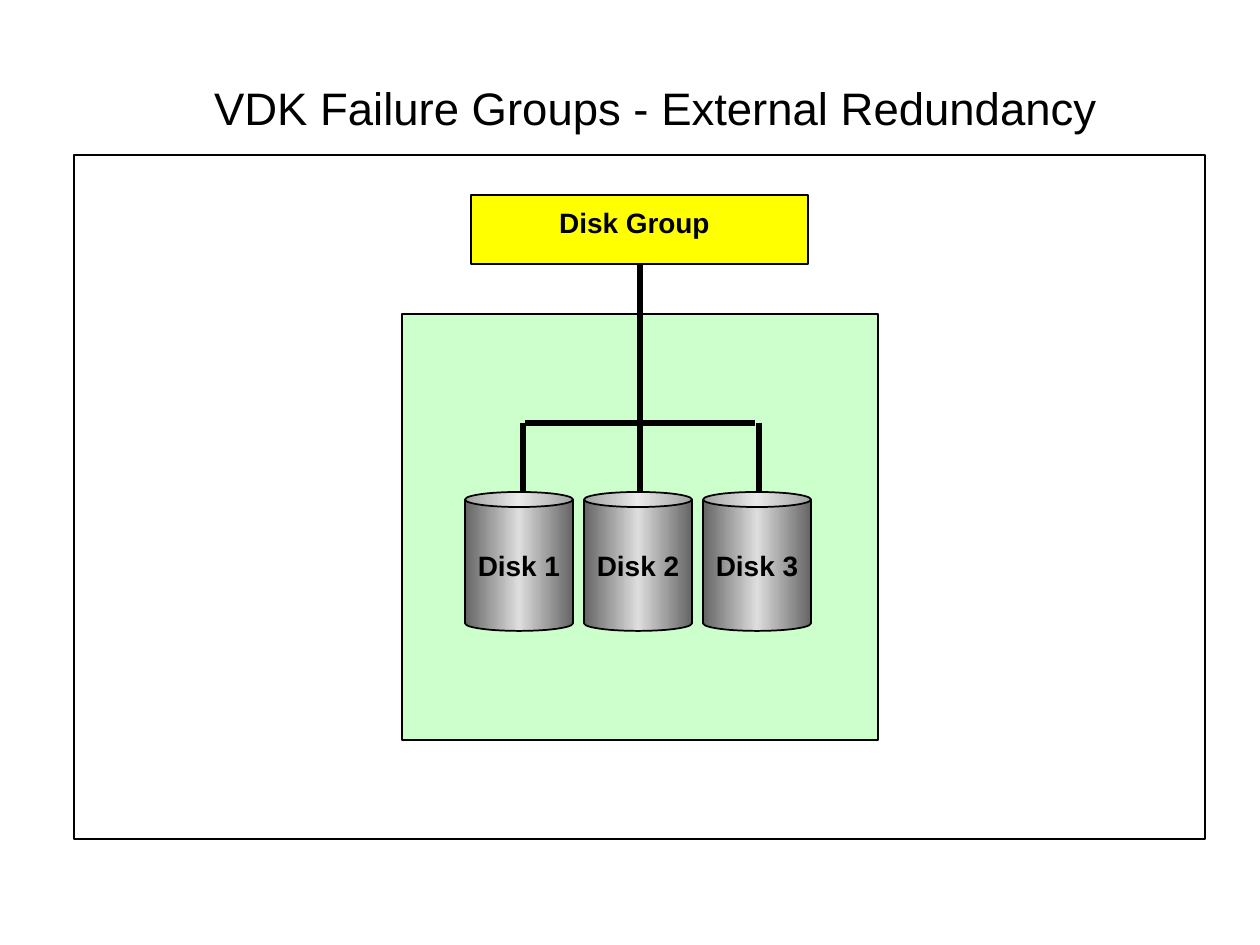
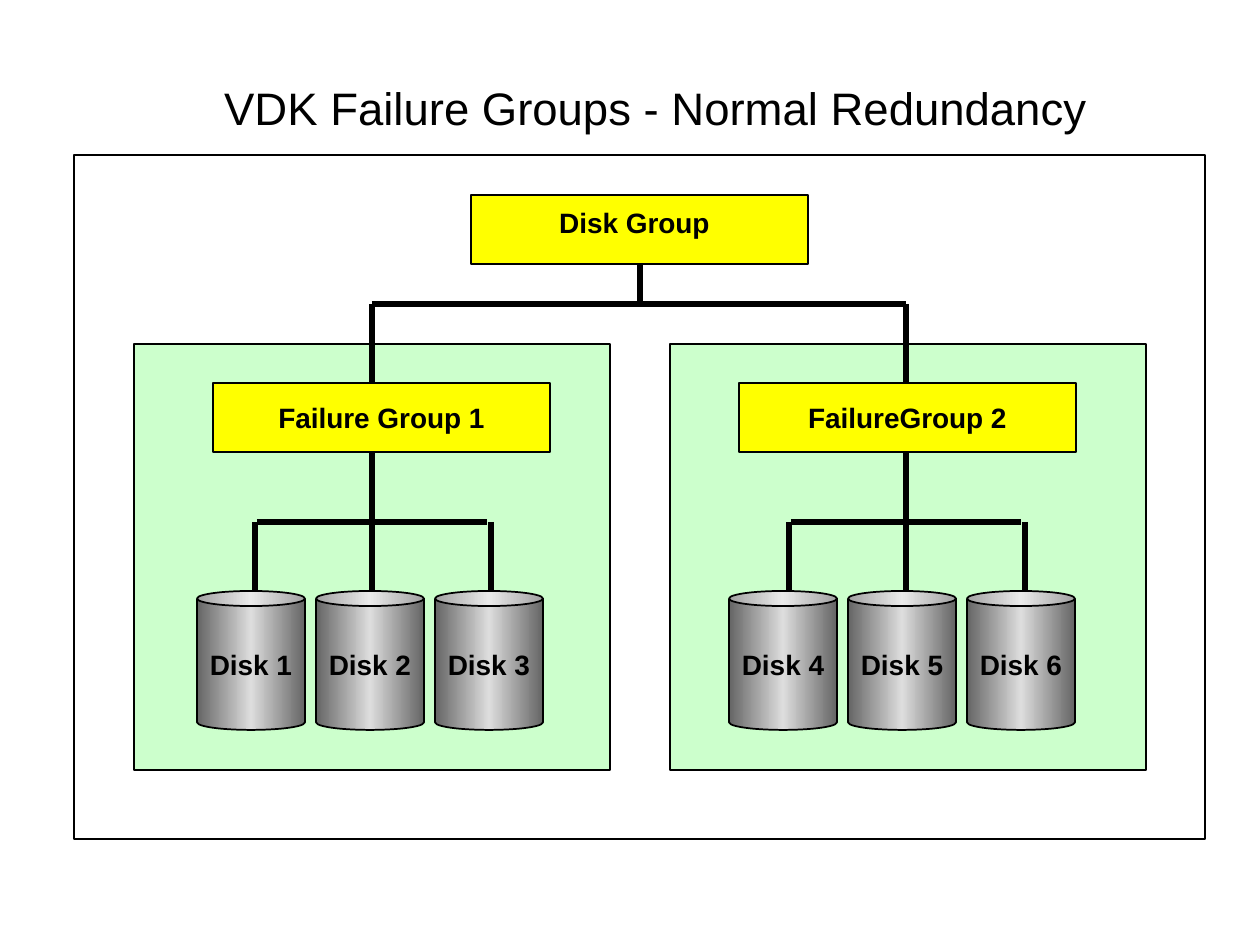
from copy import deepcopy

from lxml import etree
from pptx import Presentation
from pptx.dml.color import RGBColor
from pptx.enum.shapes import MSO_CONNECTOR, MSO_SHAPE
from pptx.enum.text import MSO_ANCHOR, MSO_AUTO_SIZE, PP_ALIGN
from pptx.oxml.ns import qn
from pptx.util import Pt

RECTANGLE, CAN = MSO_SHAPE.RECTANGLE, MSO_SHAPE.CAN
STRAIGHT = MSO_CONNECTOR.STRAIGHT
CENTER, BOTTOM = PP_ALIGN.CENTER, MSO_ANCHOR.BOTTOM
NO_AUTOFIT = MSO_AUTO_SIZE.NONE

PX_PER_INCH = 126
EMU_PER_PX = 914400 / PX_PER_INCH
FONT = "Arial"
BLACK, YELLOW, GREEN = "000000", "FFFF00", "CCFFCC"
METAL_DARK, METAL_LIGHT = "656565", "DDDDDD"

# Content: each group has a region corner, a trunk x, the x of its first disk
# and, when it is named, the left edge of its name box.
SLIDES = [
    {
        "title": "VDK Failure Groups - External Redundancy",
        "groups": [
            {"name": None, "region": (402, 314), "trunk": 640, "first_disk": 465,
             "disks": ["Disk 1", "Disk 2", "Disk 3"]},
        ],
    },
    {
        "title": "VDK Failure Groups - Normal Redundancy",
        "groups": [
            {"name": "Failure Group 1", "name_left": 213, "region": (134, 344),
             "trunk": 372, "first_disk": 197,
             "disks": ["Disk 1", "Disk 2", "Disk 3"]},
            {"name": "FailureGroup 2", "name_left": 739, "region": (670, 344),
             "trunk": 906, "first_disk": 729,
             "disks": ["Disk 4", "Disk 5", "Disk 6"]},
        ],
    },
]

# Geometry in px
SLIDE_SIZE = (1260, 945)
TITLE_BOX = (105, 10, 1102, 125)
FRAME = (74, 155, 1131, 684)
REGION_SIZE = (476, 426)
NAME_SIZE = (337, 69)
DISK_GROUP_AT = (471, 195)
DISK_GROUP_LABEL = (451, 199, 367, 47)
DISK_GROUP_BOTTOM = DISK_GROUP_AT[1] + NAME_SIZE[1]
STEM_X, TOP_BAR_Y = 640, 304
NAME_TOP = 383
NAME_LABEL_INSET = (30, 11)
DISK_SIZE, DISK_PITCH = (108, 139), 119
DISK_LABEL_DROP, LABEL_HEIGHT = 50, 47
DROP = 69                       # from the group's bar to its disks
BAR_HALF = 115
DROP_OFFSETS = (-117, 0, 119)   # from the trunk to each disk's line


def px(value):
    return round(value * EMU_PER_PX)


def color(hex_string):
    return RGBColor.from_string(hex_string)


def place(shape, box):
    shape.left, shape.top, shape.width, shape.height = map(px, box)


def write(shape, text, size, bold=False):
    """Set one centred black line of text."""
    paragraph = shape.text_frame.paragraphs[0]
    paragraph.text = text
    paragraph.alignment = CENTER
    font = paragraph.runs[0].font
    font.name, font.size, font.bold = FONT, Pt(size), bold
    font.color.rgb = color(BLACK)


def add_outlined(slide, kind, box, fill=None):
    shape = slide.shapes.add_shape(kind, *map(px, box))
    shape.shadow.inherit = False
    shape.line.color.rgb = color(BLACK)
    shape.line.width = Pt(1)
    if fill:
        shape.fill.solid()
        shape.fill.fore_color.rgb = color(fill)
    else:
        shape.fill.background()
    return shape


def add_label(slide, text, box):
    label = slide.shapes.add_textbox(*map(px, box))
    label.text_frame.word_wrap = False
    write(label, text, 16, bold=True)


def add_line(slide, x1, y1, x2, y2):
    line = slide.shapes.add_connector(STRAIGHT, *map(px, (x1, y1, x2, y2)))
    line.line.color.rgb = color(BLACK)
    line.line.width = Pt(3)
    etree.SubElement(line._element.spPr, qn("a:effectLst"))


def fill_with_metal(shape):
    """Fill with a horizontal dark-light-dark gradient."""
    shape.fill.gradient()
    shape.fill.gradient_angle = 0
    edge, middle = shape.fill.gradient_stops
    edge.position, middle.position = 0, 0.5
    edge.color.rgb, middle.color.rgb = color(METAL_DARK), color(METAL_LIGHT)
    stop_list = shape._element.spPr.find(".//" + qn("a:gsLst"))
    far_edge = deepcopy(stop_list[0])
    far_edge.set("pos", "100000")
    stop_list.append(far_edge)


def add_disk(slide, name, left, top):
    width, height = DISK_SIZE
    disk = add_outlined(slide, CAN, (left, top, width, height))
    disk.adjustments[0] = 0.14
    fill_with_metal(disk)
    add_label(slide, name, (left, top + DISK_LABEL_DROP, width, LABEL_HEIGHT))


def add_title(slide, text):
    title = slide.shapes.title
    place(title, TITLE_BOX)
    frame = title.text_frame
    frame.auto_size = NO_AUTOFIT
    frame.vertical_anchor = BOTTOM
    frame.margin_left = frame.margin_right = frame.margin_bottom = 0
    write(title, text, 26)


def add_group(slide, group):
    left, top = group["region"]
    trunk = group["trunk"]
    disk_top = top + (247 if group["name"] else 178)
    bar_y = disk_top - DROP
    add_outlined(slide, RECTANGLE, (left, top, *REGION_SIZE), GREEN)

    if group["name"]:
        name_left = group["name_left"]
        inset_x, inset_y = NAME_LABEL_INSET
        add_line(slide, trunk, TOP_BAR_Y, trunk, NAME_TOP)
        add_outlined(slide, RECTANGLE, (name_left, NAME_TOP, *NAME_SIZE), YELLOW)
        add_label(slide, group["name"],
                  (name_left + inset_x, NAME_TOP + inset_y,
                   NAME_SIZE[0] - 2 * inset_x, LABEL_HEIGHT))
        trunk_top = NAME_TOP + NAME_SIZE[1]
    else:
        trunk_top = TOP_BAR_Y

    add_line(slide, trunk, trunk_top, trunk, bar_y)
    add_line(slide, trunk - BAR_HALF, bar_y, trunk + BAR_HALF, bar_y)
    for index, (name, offset) in enumerate(zip(group["disks"], DROP_OFFSETS)):
        add_disk(slide, name, group["first_disk"] + index * DISK_PITCH, disk_top)
        add_line(slide, trunk + offset, bar_y, trunk + offset, disk_top)


def build_slide(presentation, content):
    slide = presentation.slides.add_slide(presentation.slide_layouts[5])
    add_title(slide, content["title"])
    add_outlined(slide, RECTANGLE, FRAME)
    groups = content["groups"]
    for group in groups:
        add_group(slide, group)

    add_line(slide, STEM_X, DISK_GROUP_BOTTOM, STEM_X, TOP_BAR_Y)
    if len(groups) > 1:
        add_line(slide, groups[0]["trunk"], TOP_BAR_Y, groups[-1]["trunk"], TOP_BAR_Y)
    add_outlined(slide, RECTANGLE, (*DISK_GROUP_AT, *NAME_SIZE), YELLOW)
    add_label(slide, "Disk Group", DISK_GROUP_LABEL)


def main():
    presentation = Presentation()
    presentation.slide_width, presentation.slide_height = map(px, SLIDE_SIZE)
    for content in SLIDES:
        build_slide(presentation, content)
    presentation.save("out.pptx")


if __name__ == "__main__":
    main()
